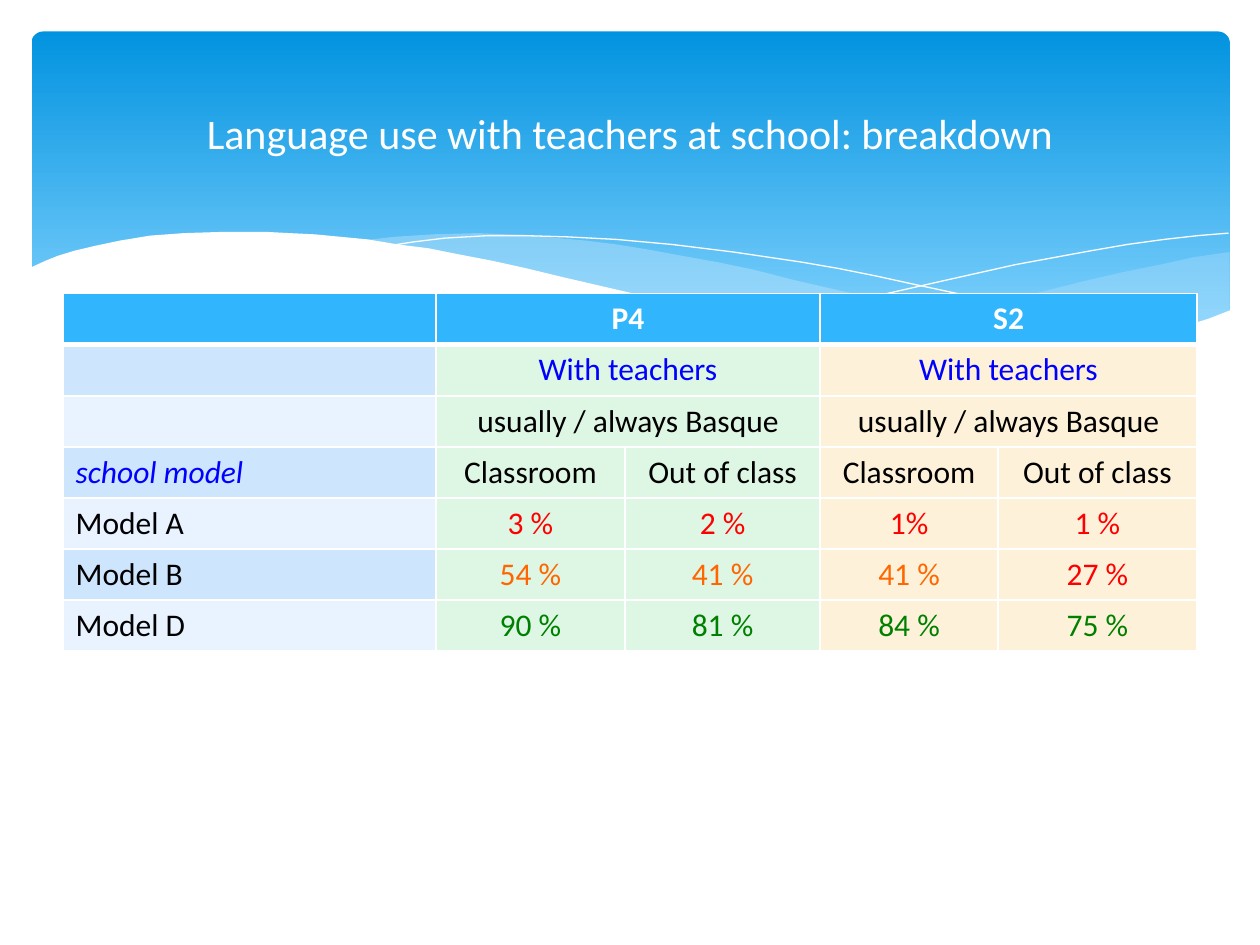
from dataclasses import dataclass

from lxml import etree
from pptx import Presentation
from pptx import util as u
from pptx.dml.color import RGBColor
from pptx.enum import shapes, text
from pptx.oxml import ns


@dataclass(frozen=True)
class Theme:
    font: str = "Calibri"
    title_size: int = 24
    table_size: int = 18
    white: str = "FFFFFF"
    black: str = "000000"
    blue: str = "0000FF"
    red: str = "FF0000"
    orange: str = "FF6600"
    green: str = "008000"
    banner_top: str = "0293E0"
    banner_bottom: str = "83D3FE"
    wave: str = "C6E7FC"
    header: str = "31B6FD"
    bands: tuple = ("CEE5FE", "E8F3FF")
    primary: str = "DEF6E4"
    secondary: str = "FDF2D9"


THEME = Theme()

# Wave outlines, in inches
RIGHT_WAVE = [
    (9.76, 2), (9.48, 2.04), (9.21, 2.1), (8.91, 2.16), (8.61, 2.23), (8.05, 2.37),
    (7.53, 2.48), (7.06, 2.57), (6.61, 2.65), (6.91, 2.69), (7.19, 2.72), (7.45, 2.75),
    (7.69, 2.77), (8.03, 2.78), (8.35, 2.77), (8.63, 2.75), (8.89, 2.72), (9.13, 2.67),
    (9.35, 2.62), (9.49, 2.57), (9.76, 2.47)]
MIDDLE_WAVE = [
    (8.93, 2.73), (8.66, 2.69), (8.07, 2.6), (7.41, 2.47), (6.68, 2.31), (6.29, 2.22),
    (5.98, 2.14), (5.69, 2.08), (5.41, 2.03), (5.14, 1.98), (4.89, 1.94), (4.65, 1.91),
    (4.2, 1.87), (3.8, 1.85), (3.44, 1.86), (3.13, 1.88), (2.86, 1.91), (3.23, 1.96),
    (3.62, 2.03), (4.04, 2.11), (4.49, 2.22), (4.91, 2.32), (5.3, 2.4), (5.66, 2.48),
    (6.01, 2.55), (6.34, 2.61), (6.65, 2.66), (6.95, 2.7), (7.22, 2.74), (7.48, 2.76),
    (7.85, 2.78), (8.28, 2.78), (8.57, 2.77), (8.93, 2.73)]
FALLING_LINE = [
    (3.09, 1.95), (3.28, 1.92), (3.53, 1.89), (3.87, 1.87), (4.16, 1.87), (4.5, 1.88),
    (4.89, 1.9), (5.33, 1.94), (5.82, 2), (6.36, 2.08), (6.65, 2.13), (6.95, 2.19),
    (7.27, 2.26), (7.6, 2.33), (7.95, 2.41), (8.31, 2.51), (8.69, 2.61), (9.07, 2.72)]
RISING_LINE = [
    (6.13, 2.57), (6.53, 2.46), (6.95, 2.35), (7.48, 2.23), (8.06, 2.1), (8.66, 1.99),
    (8.95, 1.94), (9.24, 1.9), (9.51, 1.87), (9.75, 1.85)]
WHITE_WAVE = [
    (9.77, 2.46), (9.59, 2.53), (9.4, 2.59), (9.2, 2.65), (8.99, 2.69), (8.75, 2.73),
    (8.5, 2.75), (8.23, 2.77), (7.93, 2.76), (7.61, 2.75), (7.26, 2.72), (6.88, 2.68),
    (6.48, 2.62), (6.03, 2.54), (5.55, 2.45), (5.03, 2.33), (4.47, 2.2), (4.18, 2.13),
    (3.91, 2.07), (3.65, 2.02), (3.4, 1.97), (3.16, 1.94), (2.92, 1.9), (2.71, 1.88),
    (2.5, 1.86), (2.3, 1.85), (2.11, 1.84), (1.77, 1.84), (1.46, 1.85), (1.19, 1.87),
    (0.95, 1.91), (0.76, 1.95), (0.59, 1.99), (0.46, 2.03), (0.36, 2.07), (0.23, 2.13),
    (0.23, 3.29), (9.77, 3.29)]

COLUMN_WIDTHS = (2.96, 1.5, 1.55, 1.41, 1.58)
ROWS = [
    ("", "P4", "", "S2", ""),
    ("", "With teachers", "", "With teachers", ""),
    ("", "usually / always Basque", "", "usually / always Basque", ""),
    ("school model", "Classroom", "Out of class", "Classroom", "Out of class"),
    ("Model A", "3 %", "2 %", "1%", "1 %"),
    ("Model B", "54 %", "41 %", "41 %", "27 %"),
    ("Model D", "90 %", "81 %", "84 %", "75 %"),
]
MERGED_ROWS = 3


def rgb(color):
    return RGBColor.from_string(color)


def add_banner(page):
    box = page.shapes.add_shape(
        shapes.MSO_SHAPE.ROUNDED_RECTANGLE,
        u.Inches(0.25), u.Inches(0.25), u.Inches(9.51), u.Inches(2.7))
    box.adjustments[0] = 0.034
    box.shadow.inherit = False
    box.line.fill.background()
    box.fill.gradient()
    box.fill.gradient_angle = 270
    colors = (THEME.banner_top, THEME.banner_bottom)
    for stop, color, position in zip(box.fill.gradient_stops, colors, (0, 0.9)):
        stop.color.rgb = rgb(color)
        stop.position = position


def add_outline(page, points, closed):
    start, *rest = [(u.Inches(x), u.Inches(y)) for x, y in points]
    builder = page.shapes.build_freeform(*start)
    builder.add_line_segments(rest, close=closed)
    shape = builder.convert_to_shape()
    shape.shadow.inherit = False
    return shape


def add_wave(page, points, color, opacity=100):
    wave = add_outline(page, points, closed=True)
    wave.line.fill.background()
    wave.fill.solid()
    wave.fill.fore_color.rgb = rgb(color)
    if opacity < 100:
        tint = wave.element.spPr.find(ns.qn("a:solidFill"))[0]
        etree.SubElement(tint, ns.qn("a:alpha"), val=str(opacity * 1000))


def add_wave_line(page, points):
    line = add_outline(page, points, closed=False)
    line.fill.background()
    line.line.color.rgb = rgb(THEME.white)
    line.line.width = u.Pt(0)


def format_text(frame, size, color, align, bold=False, italic=False):
    for para in frame.paragraphs:
        para.alignment = align
        for span in para.runs:
            font = span.font
            font.name, font.size = THEME.font, u.Pt(size)
            font.bold, font.italic = bold, italic
            font.color.rgb = rgb(color)


def add_borders(cell, bottom):
    properties = cell._tc.get_or_add_tcPr()
    for index, (side, width) in enumerate(zip("LRTB", (1, 1, 1, bottom))):
        border = etree.Element(ns.qn(f"a:ln{side}"), w=str(u.Pt(width)))
        fill = etree.SubElement(border, ns.qn("a:solidFill"))
        etree.SubElement(fill, ns.qn("a:srgbClr"), val=THEME.white)
        properties.insert(index, border)


def cell_fill(row, column):
    if row == 0:
        return THEME.header
    if column == 0:
        return THEME.bands[(row - 1) % 2]
    return THEME.primary if column < 3 else THEME.secondary


def text_color(row, label):
    if row == 0:
        return THEME.white
    if label in ("With teachers", "school model"):
        return THEME.blue
    if not label.endswith("%"):
        return THEME.black
    share = int(label.rstrip(" %"))
    if share >= 75:
        return THEME.green
    return THEME.orange if share > 40 else THEME.red


def add_results_table(page):
    frame = page.shapes.add_table(
        len(ROWS), len(COLUMN_WIDTHS),
        u.Inches(0.5), u.Inches(2.33), u.Inches(9), u.Inches(2.84))
    table = frame.table
    table.horz_banding = False
    for column, width in zip(table.columns, COLUMN_WIDTHS):
        column.width = u.Inches(width)
    for row, labels in enumerate(ROWS):
        for column, label in enumerate(labels):
            cell = table.cell(row, column)
            cell.fill.solid()
            cell.fill.fore_color.rgb = rgb(cell_fill(row, column))
            add_borders(cell, bottom=3 if row == 0 else 1)
            if label:
                cell.text_frame.text = label
                align = text.PP_ALIGN.CENTER if column else text.PP_ALIGN.LEFT
                format_text(cell.text_frame, THEME.table_size, text_color(row, label),
                            align, bold=row == 0, italic=label == "school model")
    # Group headings span two columns
    for row in range(MERGED_ROWS):
        for column in (1, 3):
            table.cell(row, column).merge(table.cell(row, column + 1))


def set_title(page, wording):
    title = page.shapes.title
    title.left, title.top = u.Inches(0.5), u.Inches(0.37)
    title.width, title.height = u.Inches(9), u.Inches(1.37)
    title.text_frame.text = wording
    title.text_frame.vertical_anchor = text.MSO_ANCHOR.MIDDLE
    format_text(title.text_frame, THEME.title_size, THEME.white, text.PP_ALIGN.CENTER)
    # Bring the title in front of the banner
    title.element.getparent().append(title.element)


def main():
    deck = Presentation()
    deck.slide_width, deck.slide_height = u.Inches(10), u.Inches(7.5)
    page = deck.slides.add_slide(deck.slide_layouts[5])

    # Banner with waves
    add_banner(page)
    add_wave(page, RIGHT_WAVE, THEME.wave, opacity=29)
    add_wave(page, MIDDLE_WAVE, THEME.wave, opacity=40)
    add_wave_line(page, FALLING_LINE)
    add_wave_line(page, RISING_LINE)
    add_wave(page, WHITE_WAVE, THEME.white)

    # Content
    add_results_table(page)
    set_title(page, "Language use with teachers at school: breakdown")
    deck.save("out.pptx")


if __name__ == "__main__":
    main()
